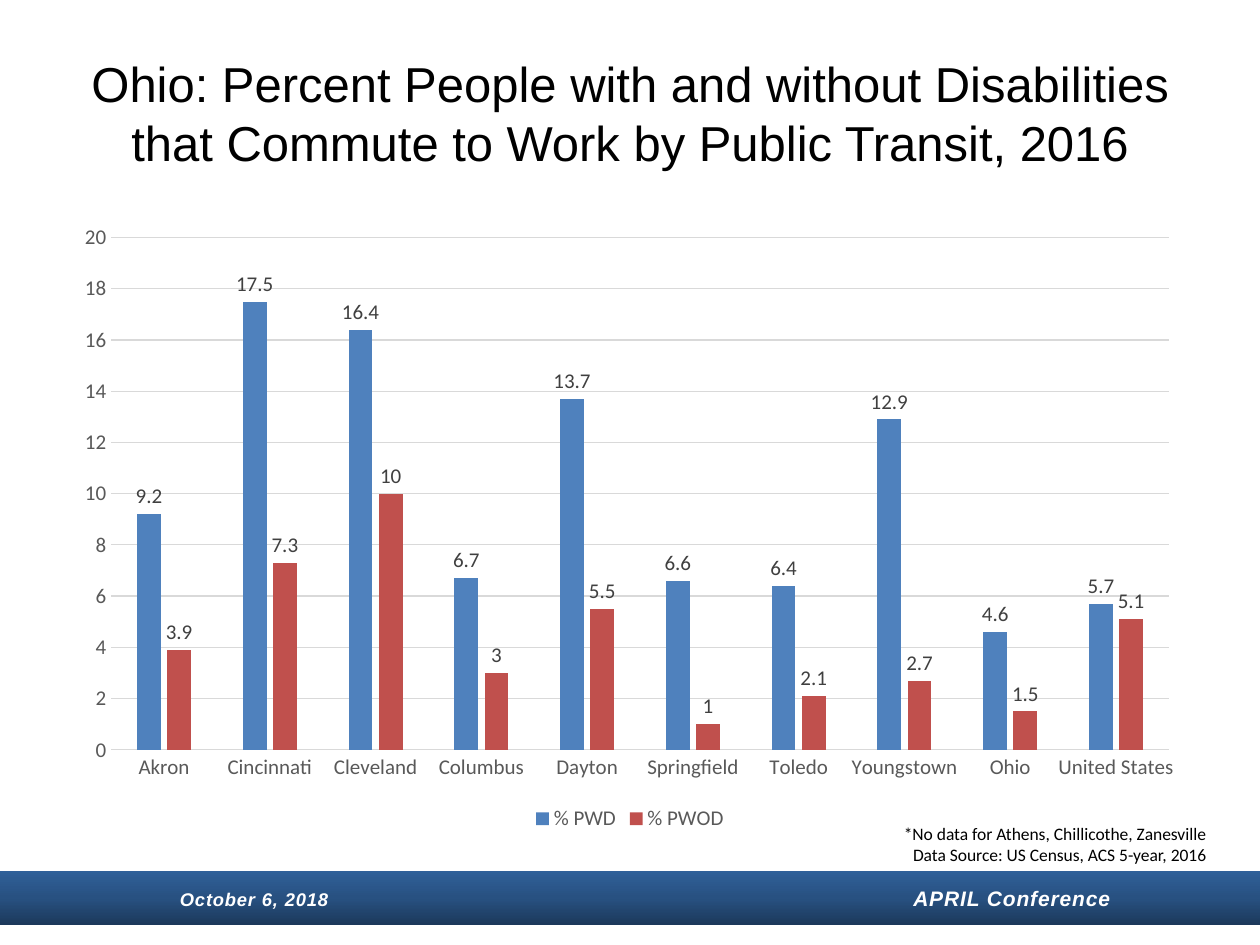
"""Build the Ohio public transit commuting slide with its clustered column chart."""
import copy

import pptx
import pptx.chart.data
import pptx.dml.color
import pptx.enum.chart
import pptx.enum.shapes
import pptx.enum.text
import pptx.oxml
import pptx.oxml.ns
import pptx.util


def color(value):
    return pptx.dml.color.RGBColor.from_string(value)


def style(font, shade, **values):
    font.color.rgb = color(shade)
    for key, value in values.items():
        setattr(font, key, pptx.util.Pt(value) if key == "size" else value)


deck = pptx.Presentation()
deck.slide_width, deck.slide_height = pptx.util.Inches(10), pptx.util.Inches(7.5)
W, H = deck.slide_width, deck.slide_height
margin, content = int(W * 0.05), int(W * 0.9)
slide = deck.slides.add_slide(deck.slide_layouts[5])

footer = slide.shapes.add_shape(
    pptx.enum.shapes.MSO_SHAPE.RECTANGLE, 0, int(H * 0.9213), W, int(H * 0.0573))
footer.shadow.inherit = False
footer.line.fill.background()
footer.fill.gradient()
footer.fill.gradient_angle = 90
stops = footer._element.spPr.find(".//" + pptx.oxml.ns.qn("a:gsLst"))
stops.insert(1, copy.deepcopy(stops[0]))
for stop, position, shade in zip(
        footer.fill.gradient_stops, (0, 0.5, 1), ("1C395B", "285181", "306099")):
    stop.position = position
    stop.color.rgb = color(shade)

footer.text_frame.vertical_anchor = pptx.enum.text.MSO_ANCHOR.MIDDLE
footer_line = footer.text_frame.paragraphs[0]
footer_line.alignment = pptx.enum.text.PP_ALIGN.LEFT
tabs = pptx.oxml.parse_xml(f"<a:tabLst {pptx.oxml.ns.nsdecls('a')}/>")
footer_line._p.get_or_add_pPr().append(tabs)
for words, size, share in (("October 6, 2018", 10.5, 0.133), ("APRIL Conference", 12, 0.715)):
    tabs.append(pptx.oxml.parse_xml(
        f'<a:tab {pptx.oxml.ns.nsdecls("a")} pos="{int(W * share)}" algn="l"/>'))
    run = footer_line.add_run()
    run.text = "\t" + words
    style(run.font, "FFFFFF", name="Arial", size=size, bold=True, italic=True)
    run.font._element.set("spc", "50")

title = slide.shapes.title
title.left, title.top, title.width, title.height = margin, int(H * 0.036), content, int(H / 6)
title.text_frame.text = (
    "Ohio: Percent People with and without Disabilities "
    "that Commute to Work by Public Transit, 2016")
title.text_frame.vertical_anchor = pptx.enum.text.MSO_ANCHOR.MIDDLE
heading = title.text_frame.paragraphs[0]
heading.alignment = pptx.enum.text.PP_ALIGN.CENTER
style(heading.runs[0].font, "000000", name="Arial", size=28)

commuters = {
    "% PWD": ("4F81BD", (9.2, 17.5, 16.4, 6.7, 13.7, 6.6, 6.4, 12.9, 4.6, 5.7)),
    "% PWOD": ("C0504D", (3.9, 7.3, 10, 3, 5.5, 1, 2.1, 2.7, 1.5, 5.1)),
}
rates = pptx.chart.data.CategoryChartData()
rates.categories = [
    "Akron", "Cincinnati", "Cleveland", "Columbus", "Dayton",
    "Springfield", "Toledo", "Youngstown", "Ohio", "United States"]
for group, (shade, values) in commuters.items():
    rates.add_series(group, values)
chart = slide.shapes.add_chart(
    pptx.enum.chart.XL_CHART_TYPE.COLUMN_CLUSTERED,
    margin, int(H * 0.225), content, int(H * 0.66), rates).chart
style(chart.font, "000000", name="Calibri", size=10)
chart.has_title = False
chart.has_legend = True
chart.legend.position = pptx.enum.chart.XL_LEGEND_POSITION.BOTTOM
chart.legend.include_in_layout = False

plot = chart.plots[0]
plot.gap_width, plot.overlap, plot.vary_by_categories = 219, -27, False
for series in plot.series:
    series.format.fill.solid()
    series.format.fill.fore_color.rgb = color(commuters[series.name][0])
    series.invert_if_negative = False
    labels = series.data_labels
    labels.show_value = True
    labels.position = pptx.enum.chart.XL_LABEL_POSITION.OUTSIDE_END
    style(labels.font, "404040", name="Calibri", size=12)

cities, percent = chart.category_axis, chart.value_axis
for axis in (cities, percent):
    axis.major_tick_mark = axis.minor_tick_mark = pptx.enum.chart.XL_TICK_MARK.NONE
for part in (cities.tick_labels, percent.tick_labels, chart.legend):
    style(part.font, "595959", name="Calibri", size=12)
for key, value in {"minimum_scale": 0, "maximum_scale": 20, "major_unit": 2}.items():
    setattr(percent, key, value)
percent.format.line.fill.background()
for rule in (cities.format.line, percent.major_gridlines.format.line):
    rule.color.rgb = color("D9D9D9")
    rule.width = pptx.util.Pt(0.75)

source = slide.shapes.add_textbox(
    int(W * 0.142), int(H * 0.864), int(W * 0.825), int(H * 0.0587)).text_frame
source.word_wrap = True
source.auto_size = pptx.enum.text.MSO_AUTO_SIZE.SHAPE_TO_FIT_TEXT
source.text = "*No data for Athens, Chillicothe, Zanesville\nData Source: US Census, ACS 5-year, 2016"
for note in source.paragraphs:
    note.alignment = pptx.enum.text.PP_ALIGN.RIGHT
    style(note.runs[0].font, "000000", name="Calibri", size=10)

deck.save("out.pptx")
